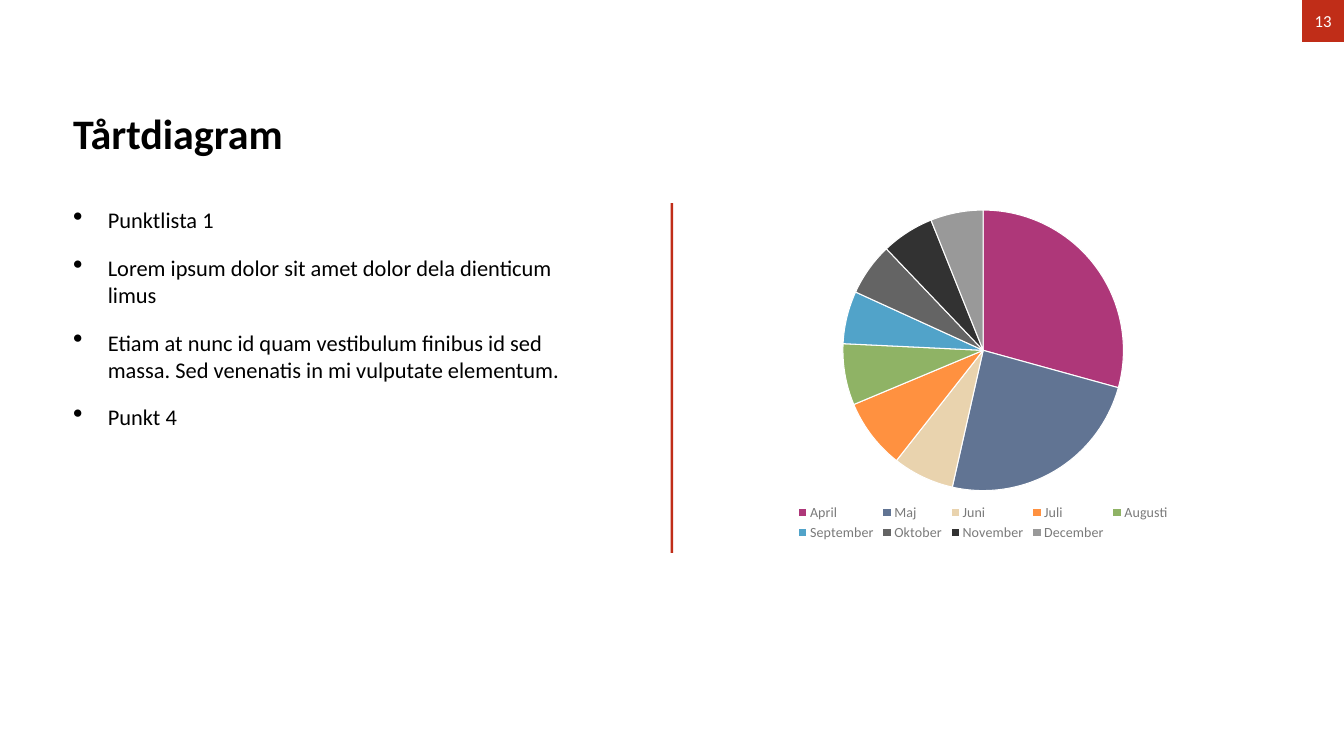
from lxml import etree
from pptx import Presentation
from pptx.chart.data import CategoryChartData
from pptx.dml.color import RGBColor
from pptx.enum import chart as ch, shapes, text
from pptx.oxml.ns import qn
from pptx.util import Inches, Pt

RED = RGBColor(0xC0, 0x2D, 0x18)
BLACK = RGBColor(0, 0, 0)
WHITE = RGBColor(0xFF, 0xFF, 0xFF)
LEGEND_GREY = RGBColor(0x7A, 0x7A, 0x7A)
DARK_GREY = RGBColor(0x32, 0x32, 0x32)
FONT = "Calibri"


def style(font, size, color, bold=False):
    font.name, font.size, font.bold = FONT, Pt(size), bold
    font.color.rgb = color


def red_box(s, left, top, width, height):
    sp = s.shapes.add_shape(shapes.MSO_SHAPE.RECTANGLE, Inches(left),
                            Inches(top), Inches(width), Inches(height))
    sp.shadow.inherit = False
    sp.fill.solid()
    sp.fill.fore_color.rgb = RED
    sp.line.fill.background()
    return sp


prs = Presentation()
prs.slide_width, prs.slide_height = Inches(26.67), Inches(15)
s = prs.slides.add_slide(prs.slide_layouts[5])

# Divider between the columns
red_box(s, 13.31, 4.03, 0.05, 6.94)

# Title
title = s.shapes.title
title.left, title.top = Inches(1.39), Inches(0.69)
title.width, title.height = Inches(22.97), Inches(2.5)
title.text_frame.text = "Tårtdiagram"

# Page number
tf = red_box(s, 25.84, 0, 0.83, 0.83).text_frame
tf.margin_left = tf.margin_right = 0
tf.vertical_anchor = text.MSO_ANCHOR.MIDDLE
tf.text = "13"
p = tf.paragraphs[0]
p.alignment = text.PP_ALIGN.CENTER
style(p.runs[0].font, 24, WHITE)

# Bullet list
bullets = s.shapes.add_textbox(Inches(1.39), Inches(4.03), Inches(10.67), Inches(6.77))
bullets.text_frame.text = "\n".join([
    "Punktlista 1",
    "Lorem ipsum dolor sit amet dolor dela dienticum limus",
    "Etiam at nunc id quam vestibulum finibus id sed massa. "
    "Sed venenatis in mi vulputate elementum.",
    "Punkt 4",
])
for i, p in enumerate(bullets.text_frame.paragraphs):
    if i:
        p.space_before = Pt(30)
    pPr = p._p.get_or_add_pPr()
    pPr.set("marL", str(Inches(0.69)))
    pPr.set("indent", str(-Inches(0.69)))
    etree.SubElement(pPr, qn("a:buSzPct")).set("val", "125000")
    etree.SubElement(pPr, qn("a:buChar")).set("char", "•")
    style(p.runs[0].font, 32, BLACK)

# Shared frame settings of title and list
for sp in (title, bullets):
    tf = sp.text_frame
    tf.word_wrap = True
    tf.auto_size = text.MSO_AUTO_SIZE.NONE
    tf.margin_left = tf.margin_right = tf.margin_top = tf.margin_bottom = Inches(0.06)
title.text_frame.vertical_anchor = text.MSO_ANCHOR.BOTTOM
p = title.text_frame.paragraphs[0]
p.alignment = text.PP_ALIGN.LEFT
style(p.runs[0].font, 60, BLACK, bold=True)

# Pie chart: month, value, slice colour
months = [
    ("April", 29, RGBColor(0xAE, 0x37, 0x79)),
    ("Maj", 24, RGBColor(0x61, 0x74, 0x93)),
    ("Juni", 7, RGBColor(0xE9, 0xD3, 0xAE)),
    ("Juli", 8, RGBColor(0xFF, 0x91, 0x40)),
    ("Augusti", 7, RGBColor(0x8F, 0xB3, 0x65)),
    ("September", 6, RGBColor(0x51, 0xA3, 0xC9)),
    ("Oktober", 6, RGBColor(0x64, 0x64, 0x64)),
    ("November", 6, DARK_GREY),
    ("December", 6, RGBColor(0x99, 0x99, 0x99)),
]
data = CategoryChartData()
data.categories = [name for name, _, _ in months]
data.add_series("Series 1", [value for _, value, _ in months])
chart = s.shapes.add_chart(ch.XL_CHART_TYPE.PIE, Inches(14.6), Inches(4.03),
                           Inches(9.82), Inches(6.77), data).chart
chart.has_title = False
style(chart.font, 10, DARK_GREY)
chart.has_legend = True
chart.legend.position = ch.XL_LEGEND_POSITION.BOTTOM
chart.legend.include_in_layout = False
style(chart.legend.font, 20, LEGEND_GREY)
plot = chart.plots[0]
plot.vary_by_categories = True
for i, (_, _, color) in enumerate(months):
    fmt = plot.series[0].points[i].format
    fmt.fill.solid()
    fmt.fill.fore_color.rgb = color
    fmt.line.color.rgb = WHITE
    fmt.line.width = Pt(1.5)

prs.save("out.pptx")
